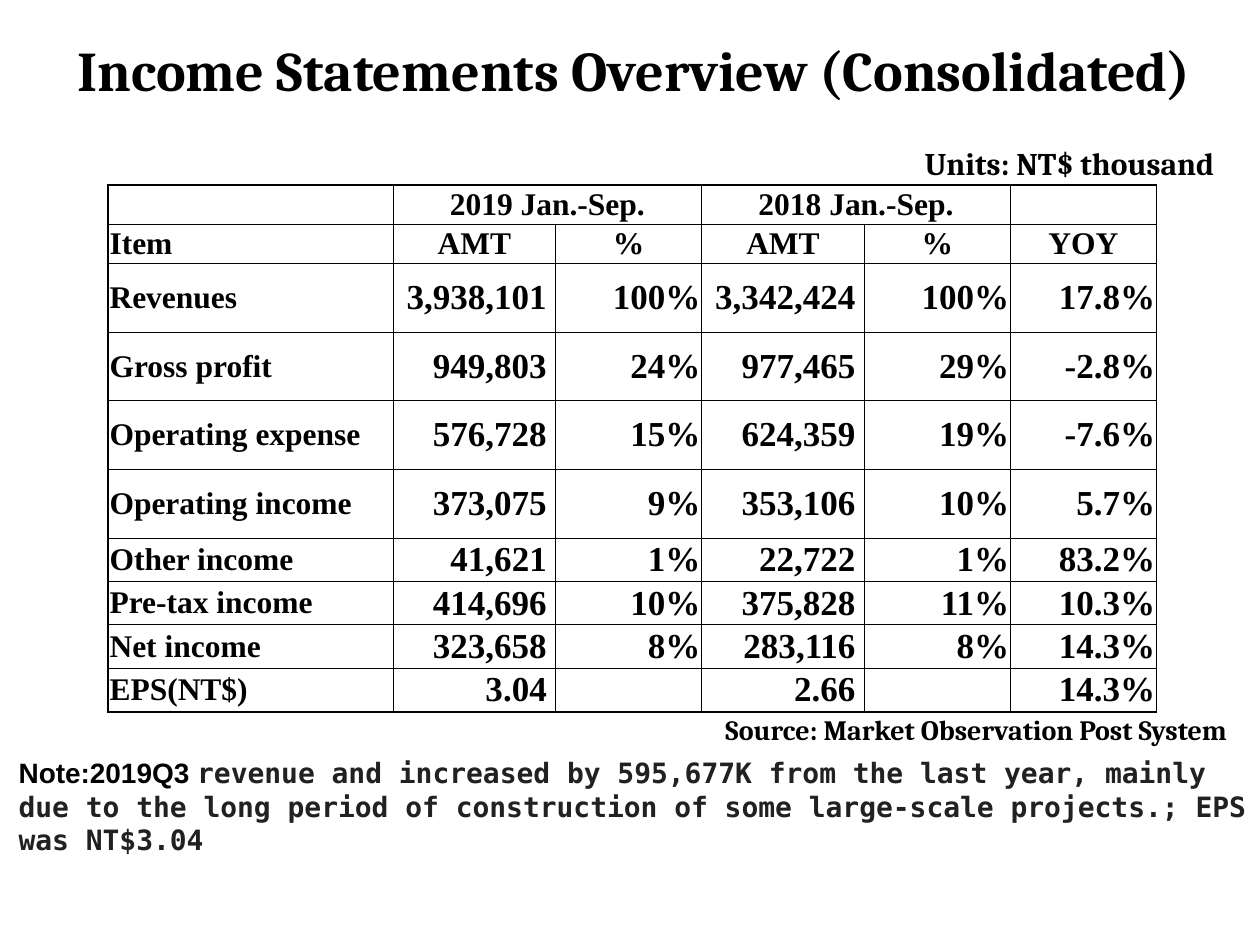
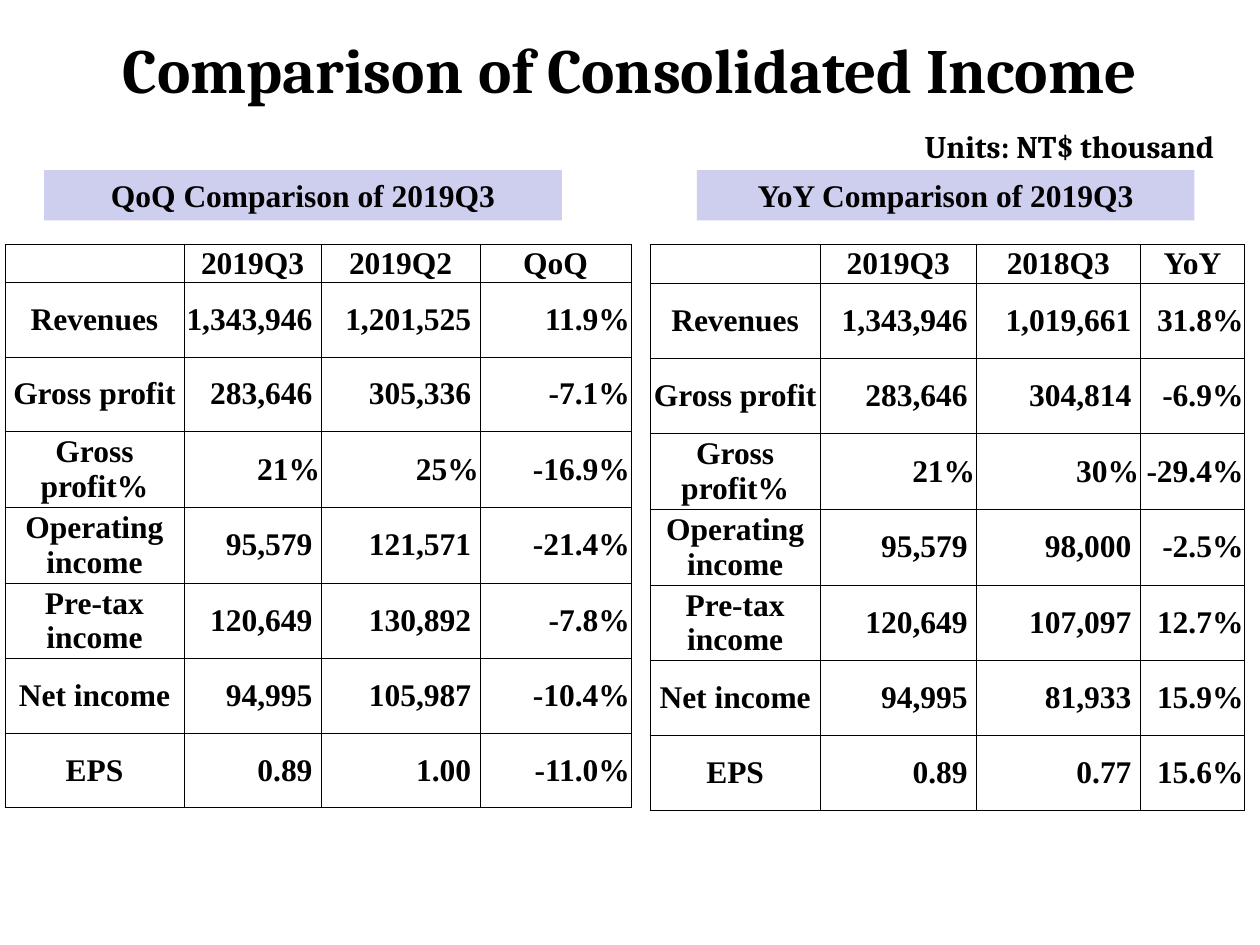
from dataclasses import dataclass

from lxml import etree
from pptx import Presentation
from pptx.dml.color import RGBColor
from pptx.enum.shapes import MSO_SHAPE
from pptx.enum.text import MSO_ANCHOR, MSO_AUTO_SIZE, PP_ALIGN
from pptx.oxml.ns import qn
from pptx.util import Inches, Pt

LEFT, CENTER, RIGHT = PP_ALIGN.LEFT, PP_ALIGN.CENTER, PP_ALIGN.RIGHT
MIDDLE = MSO_ANCHOR.MIDDLE
NO_AUTOFIT = MSO_AUTO_SIZE.NONE
RECTANGLE = MSO_SHAPE.RECTANGLE
TITLE_ONLY = 5


@dataclass(frozen=True)
class Theme:
    ink: str = "000000"
    note_ink: str = "212121"
    band: str = "CECEEF"
    heading_font: str = "Cambria"
    table_font: str = "Times New Roman"
    note_font: str = "Arial"
    mono_font: str = "DejaVu Sans Mono"
    title: int = 32
    large_title: int = 36
    figure: int = 20
    label: int = 18
    small: int = 16
    thin: float = 0.5
    thick: float = 1.5


theme = Theme()


def write(frame, runs, align=LEFT):
    """Fill a text frame with one paragraph of (text, font, size, colour, bold) runs."""
    frame.word_wrap = True
    paragraph = frame.paragraphs[0]
    paragraph.alignment = align
    for text, font, size, colour, bold in runs:
        run = paragraph.add_run()
        run.text = text
        run.font.name = font
        run.font.size = Pt(size)
        run.font.color.rgb = RGBColor.from_string(colour)
        run.font.bold = bold


def add_statement(slide, box, widths, heights, rows, label_align, header_rows, figure_size, outer):
    """Add a ruled table; outer is the line width of its left, top and bottom edges."""
    table = slide.shapes.add_table(len(rows), len(widths), *map(Inches, box)).table
    table.first_row = table.horz_banding = False
    for column, width in zip(table.columns, widths):
        column.width = Inches(width)
    for row, height in zip(table.rows, heights):
        row.height = Inches(height)
    for r, values in enumerate(rows):
        for c, value in enumerate(values):
            cell = table.cell(r, c)
            is_figure = r >= header_rows and c > 0
            is_amount = is_figure and not value.endswith("%")
            side = 0.01 if is_figure or label_align == LEFT else 0
            cell.margin_left = Inches(side)
            cell.margin_right = Inches(0.07 if is_amount else side)
            cell.margin_top = cell.margin_bottom = 0
            cell.vertical_anchor = MIDDLE
            if value:
                align = RIGHT if is_figure else label_align if c == 0 else CENTER
                size = figure_size if is_figure else theme.label
                write(cell.text_frame, [(value, theme.table_font, size, theme.ink, True)], align)
            else:
                cell.text_frame.paragraphs[0]._p.get_or_add_endParaRPr().set("sz", "1200")
            edges = {"lnL": c == 0, "lnR": False, "lnT": r == 0, "lnB": r == len(rows) - 1}
            properties = cell._tc.get_or_add_tcPr()
            for edge, is_outer in edges.items():
                line = etree.SubElement(properties, qn(f"a:{edge}"))
                line.set("w", str(Pt(outer if is_outer else theme.thin)))
                fill = etree.SubElement(line, qn("a:solidFill"))
                etree.SubElement(fill, qn("a:srgbClr")).set("val", theme.ink)
            cell.fill.background()
    return table


income_title = [("Income Statements Overview (Consolidated)",
                 theme.heading_font, theme.title, theme.ink, True)]
comparison_title = [
    ("Comparison", theme.heading_font, theme.large_title, theme.ink, True),
    (" ", theme.note_font, theme.title, theme.ink, False),
    ("of Consolidated Income", theme.heading_font, theme.large_title, theme.ink, True),
]

prs = Presentation()
prs.slide_width, prs.slide_height = Inches(10), Inches(7.5)

# Titles and unit captions
slides = []
for title_runs, title_left, title_width, units_top in [
    (income_title, 0.2, 9.67, 1.09),
    (comparison_title, 0.5, 9, 0.96),
]:
    slide = prs.slides.add_slide(prs.slide_layouts[TITLE_ONLY])
    slides.append(slide)
    title = slide.shapes.title
    title.left, title.top = Inches(title_left), Inches(0.17)
    title.width, title.height = Inches(title_width), Inches(0.75)
    title.text_frame.auto_size = NO_AUTOFIT
    title.text_frame.vertical_anchor = MIDDLE
    write(title.text_frame, title_runs, CENTER)
    units = slide.shapes.add_textbox(Inches(7.24), Inches(units_top), Inches(2.76), Inches(0.4))
    write(units.text_frame,
          [("Units: NT$ thousand", theme.heading_font, theme.label, theme.ink, True)])
overview, comparison = slides

# Slide 1: income statement
income_rows = [
    ("", "2019 Jan.-Sep.", "", "2018 Jan.-Sep.", "", ""),
    ("Item", "AMT", "%", "AMT", "%", "YOY"),
    ("Revenues", "3,938,101", "100%", "3,342,424", "100%", "17.8%"),
    ("Gross profit", "949,803", "24%", "977,465", "29%", "-2.8%"),
    ("Operating expense", "576,728", "15%", "624,359", "19%", "-7.6%"),
    ("Operating income", "373,075", "9%", "353,106", "10%", "5.7%"),
    ("Other income", "41,621", "1%", "22,722", "1%", "83.2%"),
    ("Pre-tax income", "414,696", "10%", "375,828", "11%", "10.3%"),
    ("Net income", "323,658", "8%", "283,116", "8%", "14.3%"),
    ("EPS(NT$)", "3.04", "", "2.66", "", "14.3%"),
]
income_table = add_statement(
    overview, (0.86, 1.47, 8.35, 4.18), [2.26, 1.29, 1.16, 1.29, 1.16, 1.16],
    [0.31] * 2 + [0.545] * 4 + [0.345] * 4, income_rows, LEFT, 2, theme.figure, theme.thick)
for first_column in (1, 3):
    income_table.cell(0, first_column).merge(income_table.cell(0, first_column + 1))

source = overview.shapes.add_textbox(Inches(5.66), Inches(5.61), Inches(4.34), Inches(0.37))
write(source.text_frame, [("Source: Market Observation Post System",
                           theme.heading_font, theme.small, theme.ink, True)])
note = overview.shapes.add_textbox(Inches(0.05), Inches(5.95), Inches(9.96), Inches(0.94))
write(note.text_frame, [
    ("Note:2019Q3 ", theme.note_font, theme.small, theme.ink, True),
    ("revenue and increased by 595,677K from the last year, mainly due to the long period of "
     "construction of some large-scale projects.; EPS was NT$3.04",
     theme.mono_font, theme.small, theme.note_ink, True),
])

# Slide 2: quarter and year comparisons side by side
measures = ["", "Revenues", "Gross profit", "Gross profit%", "Operating income",
            "Pre-tax income", "Net income", "EPS"]
current_quarter = ["2019Q3", "1,343,946", "283,646", "21%", "95,579", "120,649", "94,995", "0.89"]
comparisons = [
    ("QoQ Comparison of 2019Q3", 0.35, 4.11, (0.04, 1.94, 4.96, 4.43), 0.28,
     [1.42, 1.09, 1.26, 1.2],
     ["2019Q2", "1,201,525", "305,336", "25%", "121,571", "130,892", "105,987", "1.00"],
     ["QoQ", "11.9%", "-7.1%", "-16.9%", "-21.4%", "-7.8%", "-10.4%", "-11.0%"]),
    ("YoY Comparison of 2019Q3", 5.53, 3.95, (5.16, 1.94, 4.72, 4.48), 0.31,
     [1.35, 1.24, 1.3, 0.83],
     ["2018Q3", "1,019,661", "304,814", "30%", "98,000", "107,097", "81,933", "0.77"],
     ["YoY", "31.8%", "-6.9%", "-29.4%", "-2.5%", "12.7%", "15.9%", "15.6%"]),
]
for heading, band_left, band_width, box, header_height, widths, earlier, change in comparisons:
    body_count = len(measures) - 1
    heights = [header_height] + [(box[3] - header_height) / body_count] * body_count
    rows = list(zip(measures, current_quarter, earlier, change))
    add_statement(comparison, box, widths, heights, rows, CENTER, 1, theme.label, theme.thin)
    band = comparison.shapes.add_shape(
        RECTANGLE, Inches(band_left), Inches(1.35), Inches(band_width), Inches(0.4))
    band.shadow.inherit = False
    band.fill.solid()
    band.fill.fore_color.rgb = RGBColor.from_string(theme.band)
    band.line.fill.background()
    band.text_frame.vertical_anchor = MIDDLE
    write(band.text_frame, [(heading, theme.table_font, theme.label, theme.ink, True)], CENTER)

prs.save("out.pptx")
